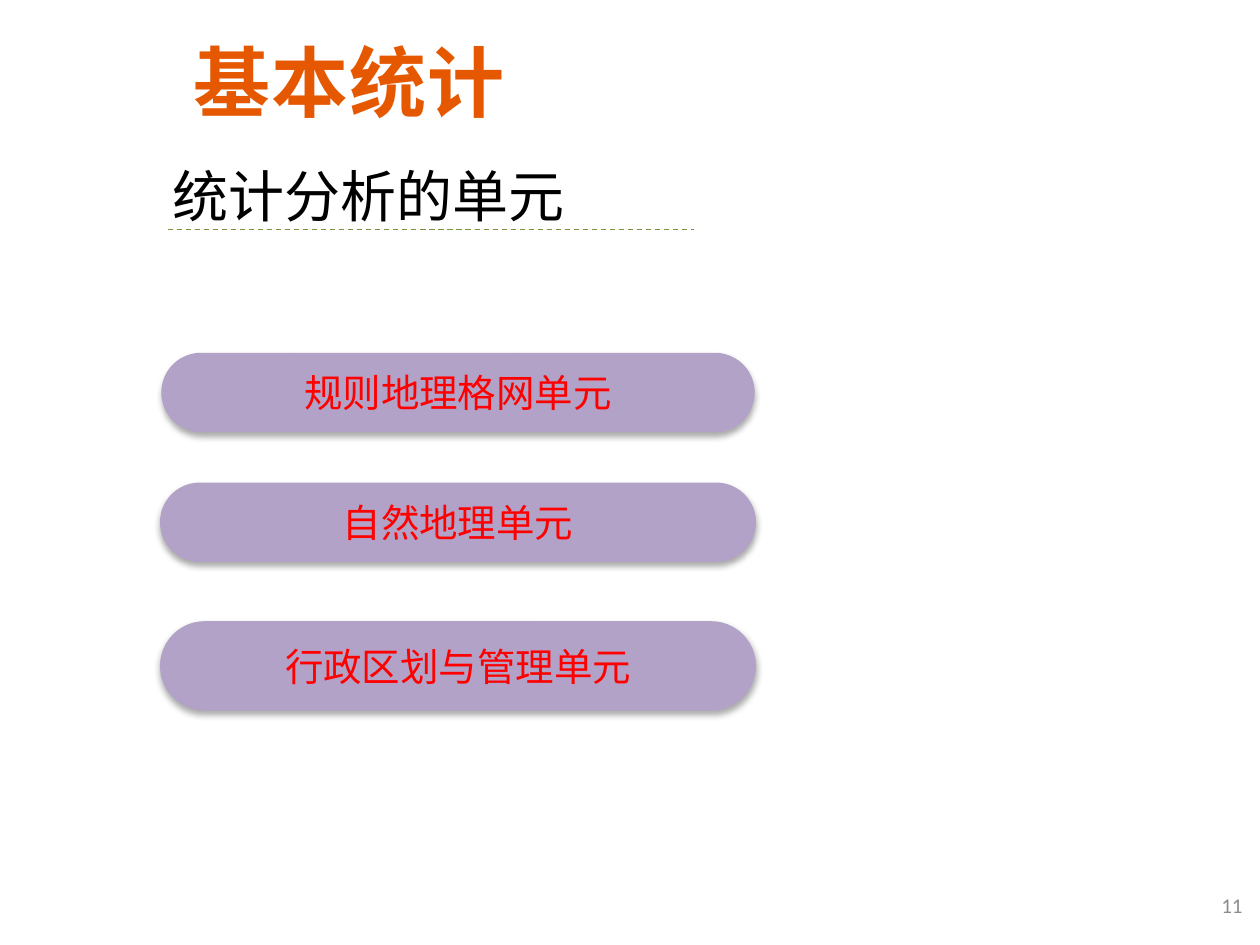
from pptx import Presentation
from pptx.dml.color import RGBColor
from pptx.enum.dml import MSO_LINE
from pptx.enum.shapes import MSO_CONNECTOR, MSO_SHAPE
from pptx.enum.text import MSO_ANCHOR, MSO_AUTO_SIZE, PP_ALIGN
from pptx.oxml import parse_xml
from pptx.oxml.ns import nsdecls, qn
from pptx.util import Inches, Pt
from lxml.etree import SubElement

ORANGE = RGBColor(0xE6, 0x58, 0x00)
BLACK = RGBColor(0x00, 0x00, 0x00)
OLIVE = RGBColor(0x77, 0x93, 0x3C)
PURPLE = RGBColor(0xB3, 0xA2, 0xC7)
RED = RGBColor(0xFF, 0x00, 0x00)
GREY = RGBColor(0x8C, 0x8C, 0x8C)
CJK = "Noto Sans CJK SC"
LATIN = "Calibri"

UNITS = [
    ("规则地理格网单元", (1.28, 2.8, 4.71, 0.63)),
    ("自然地理单元", (1.27, 3.83, 4.73, 0.63)),
    ("行政区划与管理单元", (1.27, 4.93, 4.73, 0.71)),
]
SHADOW = (
    f'<a:outerShdw {nsdecls("a")} blurRad="44450" dist="27940" dir="5400000" algn="ctr" '
    'rotWithShape="0"><a:srgbClr val="000000"><a:alpha val="32000"/></a:srgbClr></a:outerShdw>'
)


def write(frame, text, size, color, font=CJK, align=PP_ALIGN.LEFT):
    """Fill a text frame with one styled paragraph and return it."""
    paragraph = frame.paragraphs[0]
    paragraph.text = text
    paragraph.alignment = align
    paragraph.font.size = Pt(size)
    paragraph.font.color.rgb = color
    paragraph.font.name = font
    SubElement(paragraph.font._element, qn("a:ea"), typeface=CJK)
    return paragraph


def add_title(slide, box):
    """Place the slide title."""
    frame = slide.shapes.add_textbox(*map(Inches, box)).text_frame
    frame.word_wrap = True
    frame.auto_size = MSO_AUTO_SIZE.SHAPE_TO_FIT_TEXT
    frame.vertical_anchor = MSO_ANCHOR.MIDDLE
    title = write(frame, "基本统计", 44, ORANGE)
    title.line_spacing = Pt(70)
    title.font.bold = True
    title.font._element.set("spc", "50")


def add_heading(slide, box):
    """Place the section heading above its dashed rule."""
    left, top, width, height = box
    rule_y = Inches(top + 0.59)
    rule = slide.shapes.add_connector(
        MSO_CONNECTOR.STRAIGHT, Inches(left + 0.06), rule_y, Inches(left + width), rule_y
    )
    rule.line.color.rgb = OLIVE
    rule.line.width = Pt(0.75)
    rule.line.dash_style = MSO_LINE.DASH
    SubElement(rule._element.spPr, qn("a:effectLst"))
    frame = slide.shapes.add_textbox(*map(Inches, box)).text_frame
    frame.word_wrap = True
    write(frame, "统计分析的单元", 32, BLACK, LATIN)


def add_unit(slide, text, box):
    """Place one pill naming a unit of analysis."""
    pill = slide.shapes.add_shape(MSO_SHAPE.ROUNDED_RECTANGLE, *map(Inches, box))
    pill.adjustments[0] = 0.5
    pill.fill.solid()
    pill.fill.fore_color.rgb = PURPLE
    pill.line.fill.background()
    pill.shadow.inherit = False
    pill._element.spPr.find(qn("a:effectLst")).append(parse_xml(SHADOW))
    pill.text_frame.vertical_anchor = MSO_ANCHOR.MIDDLE
    write(pill.text_frame, text, 22, RED, align=PP_ALIGN.CENTER)


def add_page_number(slide, box):
    """Place the page number."""
    frame = slide.shapes.add_textbox(*map(Inches, box)).text_frame
    frame.word_wrap = True
    frame.vertical_anchor = MSO_ANCHOR.MIDDLE
    write(frame, "11", 12, GREY, LATIN, PP_ALIGN.RIGHT)


def main():
    """Build and save the slide."""
    deck = Presentation()
    deck.slide_width, deck.slide_height = Inches(10), Inches(7.5)
    slide = deck.slides.add_slide(deck.slide_layouts[6])
    add_title(slide, (1.44, 0.03, 3.26, 0.98))
    add_heading(slide, (1.27, 1.23, 4.24, 0.64))
    for text, box in UNITS:
        add_unit(slide, text, box)
    add_page_number(slide, (6.79, 6.98, 3.17, 0.4))
    deck.save("out.pptx")


if __name__ == "__main__":
    main()
